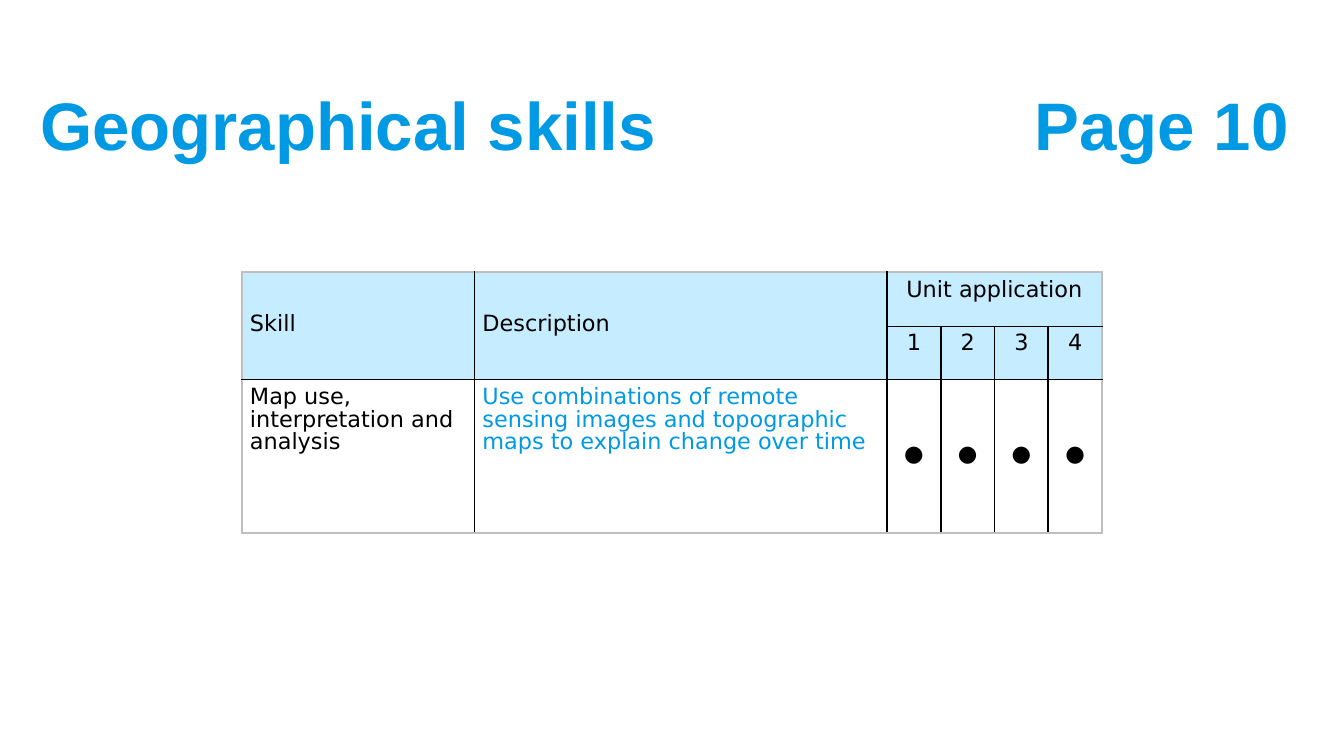
from dataclasses import dataclass

from lxml import etree
from pptx import Presentation
from pptx import util as u
from pptx.dml.color import RGBColor
from pptx.enum import text as t
from pptx.oxml import ns

WIDTH = 10
HEIGHT = WIDTH * 9 / 16
COLORS = {"blue": "0099E3", "header": "C6ECFF", "body": "FFFFFF",
          "ink": "000000", "frame": "BFBFBF"}
COLUMNS = [1.73, 3.07] + [0.4] * 4
ROWS = [0.4, 0.4, 1.14]
UNITS = range(1, 5)
INSET = 0.06


@dataclass
class Entry:
    """One table cell, placed by row and column, with its span."""
    row: int
    column: int
    text: str
    rows: int = 1
    columns: int = 1
    fill: str = "header"
    color: str = "ink"
    centered: bool = False
    middle: bool = False
    leading: float = 12
    after: float = 2


def across(percent: float) -> int:
    return u.Inches(percent * WIDTH / 100)


def down(percent: float) -> int:
    return u.Inches(percent * HEIGHT / 100)


def write(frame, text: str, *, size: float, font: str, color: str,
          bold: bool = False, centered: bool = False,
          leading: float | None = None, after: float | None = None) -> None:
    para = frame.paragraphs[0]
    para.alignment = t.PP_ALIGN.CENTER if centered else t.PP_ALIGN.LEFT
    if leading is not None:
        para.line_spacing = u.Pt(leading)
    if after is not None:
        para.space_after = u.Pt(after)
    span = para.add_run()
    span.text = text
    span.font.size, span.font.name, span.font.bold = u.Pt(size), font, bold
    span.font.color.rgb = RGBColor.from_string(COLORS[color])


def add_heading(page, text: str, left: float, top: float, width: float,
                height: float, wrap: bool = True) -> None:
    """Place a heading by percentages of the slide's size."""
    box = page.shapes.add_textbox(across(left), down(top),
                                  across(width), down(height))
    box.text_frame.word_wrap = wrap
    box.text_frame.vertical_anchor = t.MSO_ANCHOR.MIDDLE
    write(box.text_frame, text, size=36, font="Arial", color="blue", bold=True)


def add_border(cell, side: str, color: str, points: float) -> None:
    line = etree.SubElement(cell._tc.get_or_add_tcPr(), ns.qn(f"a:ln{side}"),
                            w=str(u.Pt(points)))
    fill = etree.SubElement(line, ns.qn("a:solidFill"))
    etree.SubElement(fill, ns.qn("a:srgbClr"), val=COLORS[color])


def draw_borders(table, entry: Entry) -> None:
    """Grey outside, black inside; unit columns have heavier dividers."""
    bottom, right = entry.row + entry.rows, entry.column + entry.columns
    edges = {"L": entry.column, "R": right, "T": entry.row, "B": bottom}
    for row in range(entry.row, bottom):
        for column in range(entry.column, right):
            own = {"L": column, "R": column + 1, "T": row, "B": row + 1}
            origin = (row, column) == (entry.row, entry.column)
            for side, edge in edges.items():
                if not origin and own[side] != edge:
                    continue
                vertical = side in "LR"
                last = len(COLUMNS) if vertical else len(ROWS)
                outside = edge in (0, last)
                heavy = outside or (vertical and edge >= 2)
                add_border(table.cell(row, column), side,
                           "frame" if outside else "ink", 1 if heavy else 0.5)


def draw_entry(table, entry: Entry) -> None:
    cell = table.cell(entry.row, entry.column)
    if entry.rows > 1 or entry.columns > 1:
        cell.merge(table.cell(entry.row + entry.rows - 1,
                              entry.column + entry.columns - 1))
    draw_borders(table, entry)
    cell.fill.solid()
    cell.fill.fore_color.rgb = RGBColor.from_string(COLORS[entry.fill])
    cell.margin_left = cell.margin_right = u.Inches(INSET)
    cell.margin_top = cell.margin_bottom = u.Inches(INSET)
    cell.vertical_anchor = (t.MSO_ANCHOR.MIDDLE if entry.middle
                            else t.MSO_ANCHOR.TOP)
    write(cell.text_frame, entry.text, size=12, font="DejaVu Sans",
          color=entry.color, centered=entry.centered,
          leading=entry.leading, after=entry.after)


def add_skills_table(page, entries: list[Entry]) -> None:
    table = page.shapes.add_table(
        len(ROWS), len(COLUMNS), across(18), down(36),
        u.Inches(sum(COLUMNS)), u.Inches(sum(ROWS))).table
    table.first_row = table.horz_banding = False
    for column, width in zip(table.columns, COLUMNS):
        column.width = u.Inches(width)
    for row, height in zip(table.rows, ROWS):
        row.height = u.Inches(height)
    for entry in entries:
        draw_entry(table, entry)


def main() -> None:
    deck = Presentation()
    deck.slide_width, deck.slide_height = u.Inches(WIDTH), u.Inches(HEIGHT)
    page = deck.slides.add_slide(deck.slide_layouts[6])

    # Headings
    add_heading(page, "Geographical skills", 2, 8, 95.3, 16.7)
    add_heading(page, "Page 10", 76, 10, 22, 12.6, wrap=False)

    # Table header, skill row and one column for each unit
    entries = [
        Entry(0, 0, "Skill", rows=2, middle=True, after=4),
        Entry(0, 1, "Description", rows=2, middle=True, after=4),
        Entry(0, 2, "Unit application", columns=4, centered=True),
        Entry(2, 0, "Map use, interpretation and analysis", fill="body"),
        Entry(2, 1, "Use combinations of remote sensing images and "
              "topographic maps to explain change over time",
              fill="body", color="blue"),
    ]
    for unit in UNITS:
        entries += [
            Entry(1, unit + 1, str(unit), centered=True),
            Entry(2, unit + 1, "●", fill="body", centered=True,
                  middle=True, leading=11),
        ]
    add_skills_table(page, entries)

    deck.save("out.pptx")


if __name__ == "__main__":
    main()
